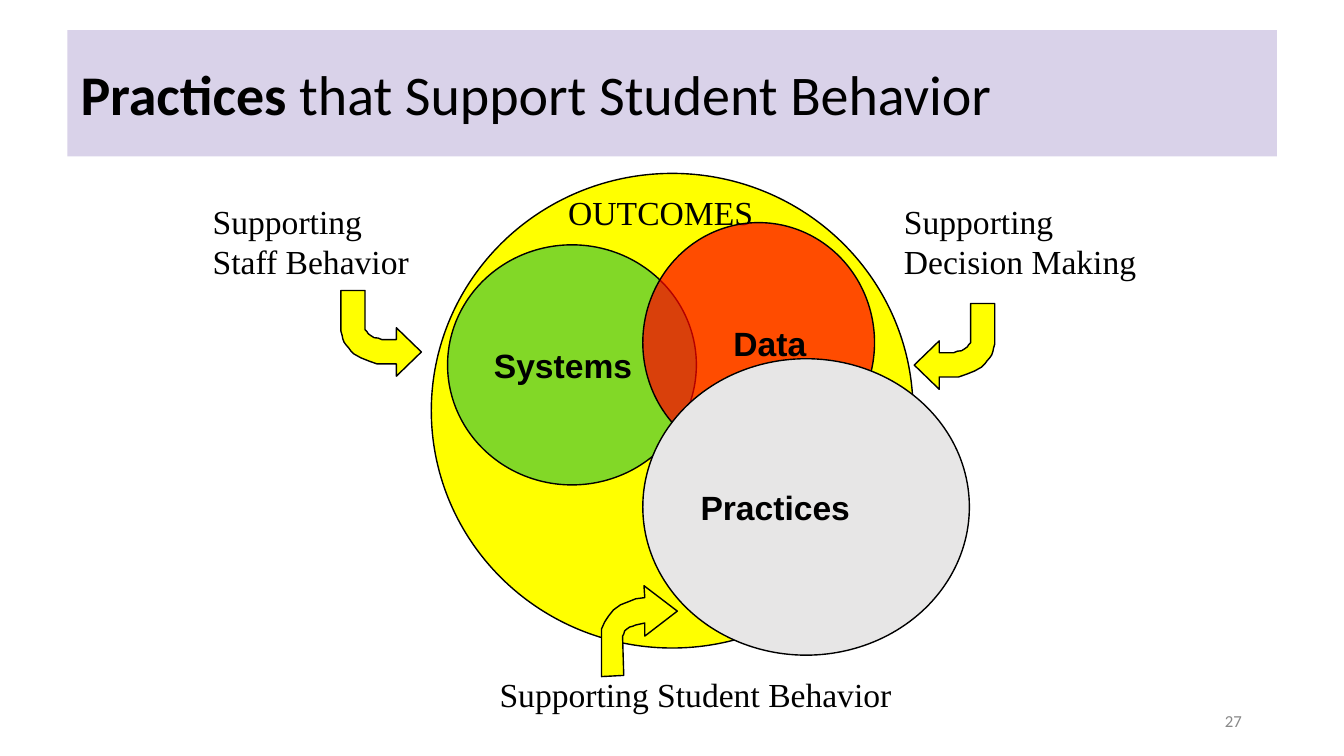
from dataclasses import dataclass

from lxml.etree import SubElement
from pptx import Presentation
from pptx.dml.color import RGBColor
from pptx.enum.shapes import MSO_SHAPE
from pptx.enum.text import MSO_ANCHOR, PP_ALIGN
from pptx.oxml.ns import qn
from pptx.shapes.autoshape import Shape
from pptx.shapes.shapetree import SlideShapes
from pptx.util import Cm, Pt


@dataclass(frozen=True)
class Theme:
    ink: str = "000000"
    muted: str = "888888"
    banner: str = "D9D2E9"
    yellow: str = "FFFF00"
    green: str = "00B050"
    red: str = "FF0000"
    grey: str = "E7E6E6"
    title_size: float = 40
    body_size: float = 24
    number_size: float = 12
    outline: float = 1
    title_font: str = "Calibri"
    label_font: str = "Arial"
    caption_font: str = "Times New Roman"


THEME = Theme()


@dataclass(frozen=True)
class Box:
    """Position and size in centimetres."""
    left: float
    top: float
    width: float
    height: float

    def lengths(self) -> tuple[Cm, Cm, Cm, Cm]:
        return Cm(self.left), Cm(self.top), Cm(self.width), Cm(self.height)


@dataclass(frozen=True)
class Circle:
    box: Box
    color: str
    label: str = ""
    opacity: int = 100
    indent: float = 0


@dataclass(frozen=True)
class Caption:
    box: Box
    text: str
    margins: tuple[float, float] = (0.25, 0.13)


@dataclass(frozen=True)
class Arrow:
    """Outline points are hundredths of a centimetre from left, top."""
    left: float
    top: float
    outline: list[tuple[int, int]]


TURN_RIGHT = [
    (203, 155), (140, 216), (140, 185), (117, 185), (91, 185), (71, 178),
    (51, 170), (33, 160), (25, 152), (20, 145), (13, 137), (8, 130),
    (5, 122), (3, 112), (0, 102), (0, 94), (0, 0), (61, 0), (61, 94),
    (61, 99), (66, 104), (69, 109), (76, 114), (84, 119), (94, 120),
    (104, 124), (117, 124), (140, 124), (140, 94),
]
TURN_LEFT = [(203 - x, y) for x, y in TURN_RIGHT]
RISE_RIGHT = [
    (191, 64), (107, 0), (109, 30), (86, 33), (66, 41), (48, 48), (30, 61),
    (18, 76), (8, 91), (0, 109), (0, 130), (0, 229), (56, 226), (53, 127),
    (56, 122), (58, 114), (64, 109), (71, 104), (79, 102), (86, 99),
    (109, 94), (109, 127),
]

OUTCOMES = Circle(Box(10.87, 4.37, 12.14, 11.96), THEME.yellow)
SYSTEMS = Circle(Box(11.28, 6.17, 6.27, 6.05), THEME.green, "Systems", opacity=49)
DATA = Circle(Box(16.2, 5.61, 5.84, 6.05), THEME.red, "Data", opacity=70, indent=1.18)
PRACTICES = Circle(Box(16.2, 9.04, 8.23, 7.47), THEME.grey, "Practices")

CAPTIONS = [
    Caption(Box(5.11, 4.93, 6.55, 2.62), "Supporting\nStaff Behavior"),
    Caption(Box(14.07, 4.7, 5.72, 1.14), "OUTCOMES"),
    Caption(Box(22.53, 4.93, 7.62, 3.73), "Supporting\nDecision Making"),
    Caption(Box(12.34, 16.74, 15.47, 2.13), "Supporting Student Behavior", (0.25, 0.25)),
]
ARROWS = [
    Arrow(8.59, 7.32, TURN_RIGHT),
    Arrow(23.04, 7.65, TURN_LEFT),
    Arrow(15.16, 14.76, RISE_RIGHT),
]
TITLE_BOX = Box(1.7, 0.76, 30.48, 3.18)
NUMBER_BOX = Box(23.93, 17.65, 7.62, 1.02)


def write_text(shape: Shape, text: str, *, font: str, size: float = THEME.body_size,
               color: str = THEME.ink, bold: bool = False, bold_lead: str = "",
               align: PP_ALIGN = PP_ALIGN.LEFT, anchor: MSO_ANCHOR = MSO_ANCHOR.TOP,
               margins: tuple[float, float] = (0.25, 0.13), indent: float = 0) -> None:
    """Fill the shape, one paragraph a line, after an optional bold lead."""
    frame = shape.text_frame
    frame.word_wrap = True
    frame.vertical_anchor = anchor
    frame.margin_left = frame.margin_right = Cm(margins[0])
    frame.margin_top = frame.margin_bottom = Cm(margins[1])
    for index, line in enumerate(text.split("\n")):
        paragraph = frame.add_paragraph() if index else frame.paragraphs[0]
        paragraph.alignment = align
        if indent:
            properties = paragraph._p.get_or_add_pPr()
            properties.set("marL", str(Cm(indent)))
            properties.set("indent", "0")
        lead = [(bold_lead, True)] if bold_lead and not index else []
        for words, is_bold in [*lead, (line, bold)]:
            run = paragraph.add_run()
            run.text = words
            run.font.name = font
            run.font.size = Pt(size)
            run.font.bold = is_bold
            run.font.color.rgb = RGBColor.from_string(color)


def paint(shape: Shape, color: str, opacity: int = 100, outlined: bool = True) -> None:
    shape.shadow.inherit = False
    shape.fill.solid()
    shape.fill.fore_color.rgb = RGBColor.from_string(color)
    if opacity < 100:
        fill_color = shape._element.spPr.find(qn("a:solidFill"))[0]
        SubElement(fill_color, qn("a:alpha")).set("val", str(opacity * 1000))
    if outlined:
        shape.line.color.rgb = RGBColor.from_string(THEME.ink)
        shape.line.width = Pt(THEME.outline)
    else:
        shape.line.fill.background()


def draw_circle(shapes: SlideShapes, circle: Circle) -> None:
    ellipse = shapes.add_shape(MSO_SHAPE.OVAL, *circle.box.lengths())
    paint(ellipse, circle.color, circle.opacity)
    if circle.label:
        write_text(ellipse, circle.label, font=THEME.label_font, bold=True,
                   anchor=MSO_ANCHOR.MIDDLE, indent=circle.indent)


def draw_caption(shapes: SlideShapes, caption: Caption) -> None:
    write_text(shapes.add_textbox(*caption.box.lengths()), caption.text,
               font=THEME.caption_font, margins=caption.margins)


def draw_arrow(shapes: SlideShapes, arrow: Arrow) -> None:
    tip, *others = arrow.outline
    builder = shapes.build_freeform(*tip, scale=Cm(0.01))
    builder.add_line_segments(others, close=True)
    paint(builder.convert_to_shape(Cm(arrow.left), Cm(arrow.top)), THEME.yellow)


def draw_title(shapes: SlideShapes) -> None:
    banner = shapes.add_shape(MSO_SHAPE.RECTANGLE, *TITLE_BOX.lengths())
    paint(banner, THEME.banner, outlined=False)
    write_text(banner, " that Support Student Behavior", bold_lead="Practices",
               font=THEME.title_font, size=THEME.title_size,
               anchor=MSO_ANCHOR.MIDDLE, margins=(0.33, 0.18))


def draw_slide_number(shapes: SlideShapes) -> None:
    write_text(shapes.add_textbox(*NUMBER_BOX.lengths()), "27", font=THEME.title_font,
               size=THEME.number_size, color=THEME.muted, align=PP_ALIGN.RIGHT,
               anchor=MSO_ANCHOR.MIDDLE)


def main() -> None:
    presentation = Presentation()
    presentation.slide_width, presentation.slide_height = Cm(33.87), Cm(19.05)
    shapes = presentation.slides.add_slide(presentation.slide_layouts[6]).shapes
    draw_title(shapes)
    draw_circle(shapes, OUTCOMES)
    draw_circle(shapes, SYSTEMS)
    for caption in CAPTIONS:
        draw_caption(shapes, caption)
    draw_circle(shapes, DATA)
    for arrow in ARROWS:
        draw_arrow(shapes, arrow)
    draw_circle(shapes, PRACTICES)
    draw_slide_number(shapes)
    presentation.save("out.pptx")


if __name__ == "__main__":
    main()
